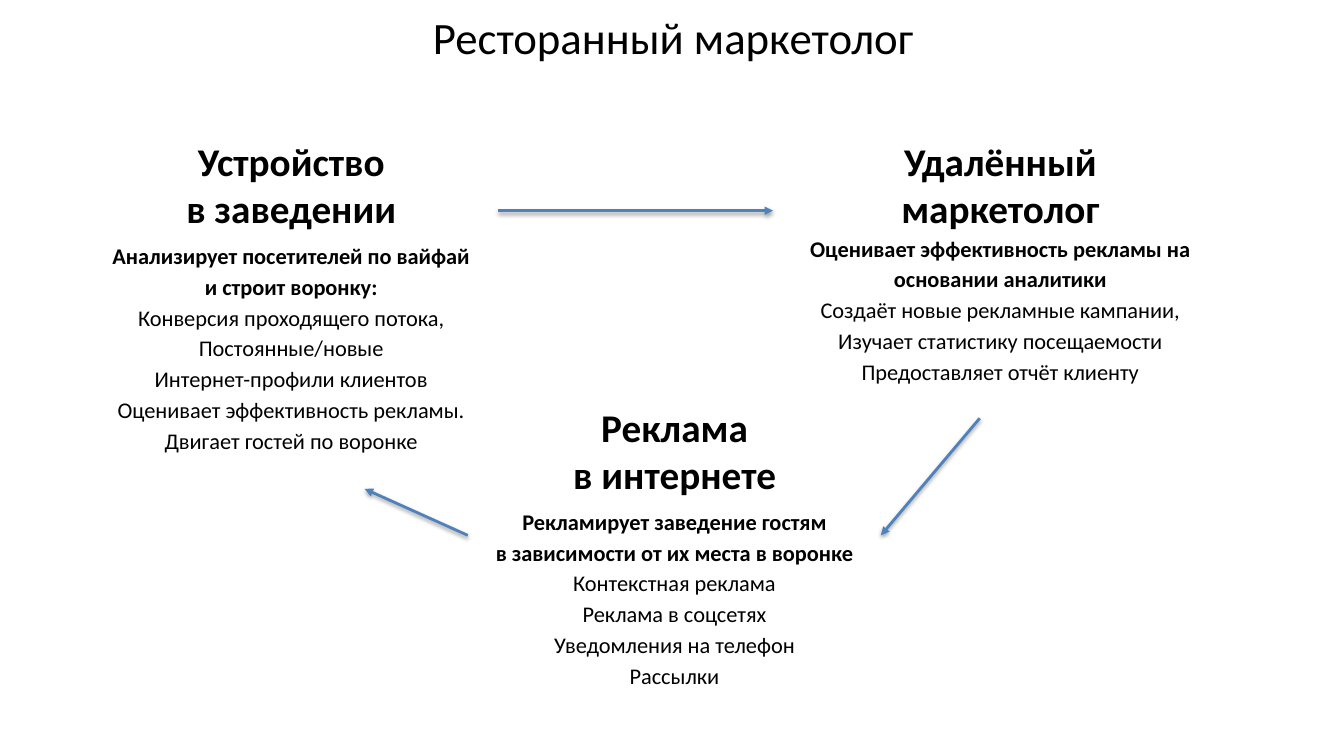
from dataclasses import dataclass

from lxml.etree import SubElement
from pptx import Presentation
from pptx.dml.color import RGBColor
from pptx.enum.shapes import MSO_CONNECTOR as ConnectorType
from pptx.enum.text import PP_ALIGN as Align
from pptx.oxml.ns import qn
from pptx.slide import Slide
from pptx.util import Cm, Pt

BLACK = RGBColor(0x00, 0x00, 0x00)
ARROW_BLUE = RGBColor(0x4F, 0x81, 0xBD)
FONT = "Calibri"
HEADING_HEIGHT = 2.64


@dataclass(frozen=True)
class TextBlock:
    center: float
    top: float
    width: float
    height: float
    lines: tuple[str, ...]
    size: int
    bold_lines: int = 0
    line_spacing: float = 1.0


@dataclass(frozen=True)
class Stage:
    center: float
    heading_top: float
    heading_width: float
    heading: tuple[str, ...]
    body_top: float
    body_width: float
    body_height: float
    body: tuple[str, ...]
    bold_lines: int


@dataclass(frozen=True)
class Arrow:
    start: tuple[float, float]
    end: tuple[float, float]


TITLE = TextBlock(16.97, 0.13, 25.35, 1.45, ("Ресторанный маркетолог",), 32)

STAGES = (
    Stage(
        7.34, 3.33, 10.41, ("Устройство", "в заведении"),
        5.87, 12.09, 6.02,
        (
            "Анализирует посетителей по вайфай",
            "и строит воронку:",
            "Конверсия проходящего потока, Постоянные/новые",
            "Интернет-профили клиентов",
            "Оценивает эффективность рекламы.",
            "Двигает гостей по воронке",
        ),
        2,
    ),
    Stage(
        17.0, 10.03, 10.41, ("Реклама", "в интернете"),
        12.57, 10.41, 6.02,
        (
            "Рекламирует заведение гостям",
            "в зависимости от их места в воронке",
            "Контекстная реклама",
            "Реклама в соцсетях",
            "Уведомления на телефон",
            "Рассылки",
        ),
        2,
    ),
    Stage(
        25.21, 3.33, 11.46, ("Удалённый", "маркетолог"),
        5.69, 11.46, 6.6,
        (
            "Оценивает эффективность рекламы на основании аналитики",
            "Создаёт новые рекламные кампании,",
            "Изучает статистику посещаемости",
            "Предоставляет отчёт клиенту",
        ),
        1,
    ),
)

ARROWS = (
    Arrow((11.79, 13.49), (9.19, 12.32)),
    Arrow((24.69, 10.54), (22.2, 13.49)),
    Arrow((12.55, 5.31), (19.48, 5.31)),
)


def add_text(slide: Slide, block: TextBlock) -> None:
    left = block.center - block.width / 2
    shape = slide.shapes.add_textbox(
        Cm(left), Cm(block.top), Cm(block.width), Cm(block.height)
    )
    text_frame = shape.text_frame
    text_frame.word_wrap = True
    text_frame.text = "\n".join(block.lines)
    for index, paragraph in enumerate(text_frame.paragraphs):
        paragraph.alignment = Align.CENTER
        paragraph.line_spacing = block.line_spacing
        for run in paragraph.runs:
            run.font.name = FONT
            run.font.size = Pt(block.size)
            run.font.bold = index < block.bold_lines
            run.font.color.rgb = BLACK


def add_stage(slide: Slide, stage: Stage) -> None:
    add_text(slide, TextBlock(
        stage.center, stage.heading_top, stage.heading_width, HEADING_HEIGHT,
        stage.heading, 28, len(stage.heading),
    ))
    add_text(slide, TextBlock(
        stage.center, stage.body_top, stage.body_width, stage.body_height,
        stage.body, 16, stage.bold_lines, 1.15,
    ))


def add_arrow(slide: Slide, arrow: Arrow) -> None:
    connector = slide.shapes.add_connector(
        ConnectorType.STRAIGHT, *map(Cm, arrow.start + arrow.end)
    )
    connector.line.color.rgb = ARROW_BLUE
    connector.line.width = Pt(2)
    SubElement(connector.line._get_or_add_ln(), qn("a:tailEnd"), type="triangle")
    effects = SubElement(connector._element.spPr, qn("a:effectLst"))
    shadow = SubElement(
        effects, qn("a:outerShdw"),
        blurRad=str(Pt(3.1)), dist=str(Pt(1.6)), dir="5400000", rotWithShape="0",
    )
    color = SubElement(shadow, qn("a:srgbClr"), val=str(BLACK))
    SubElement(color, qn("a:alpha"), val="38000")


def main() -> None:
    presentation = Presentation()
    presentation.slide_width = Cm(33.87)
    presentation.slide_height = Cm(19.05)
    slide = presentation.slides.add_slide(presentation.slide_layouts[6])
    add_text(slide, TITLE)
    for stage in STAGES:
        add_stage(slide, stage)
    for arrow in ARROWS:
        add_arrow(slide, arrow)
    presentation.save("out.pptx")


if __name__ == "__main__":
    main()
